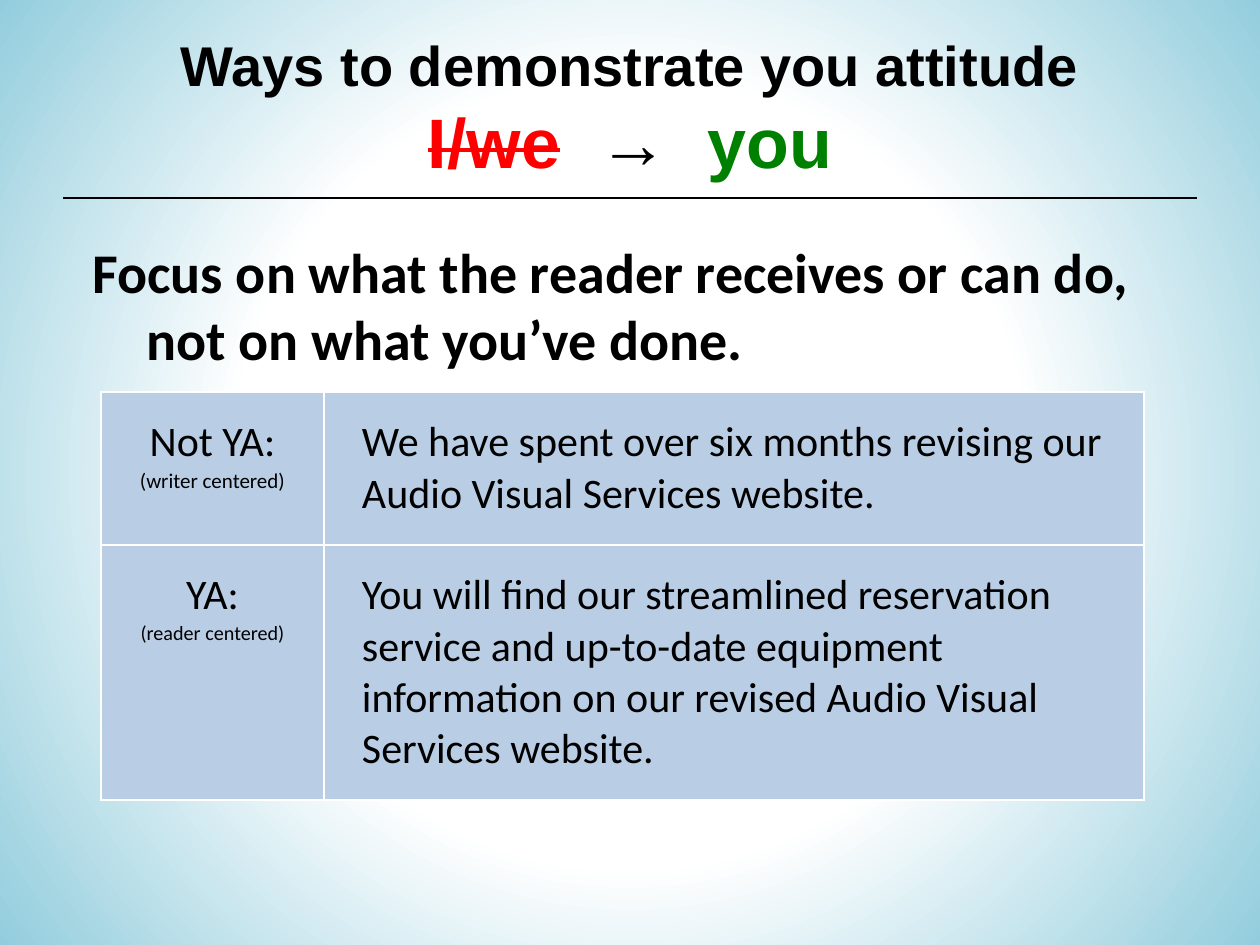
import pptx
import pptx.util
import pptx.dml.color
import pptx.enum.shapes
import pptx.enum.text
import pptx.oxml
import pptx.oxml.ns
from lxml import etree

PX_PER_INCH = 126
COLORS = {"ink": "000000", "white": "FFFFFF", "sky": "93CDDD",
          "cell": "B9CDE5", "wrong": "FF0000", "right": "008000"}
ALIGN = pptx.enum.text.PP_ALIGN
ANCHOR = pptx.enum.text.MSO_ANCHOR
qn = pptx.oxml.ns.qn


def px(count):
    return pptx.util.Emu(round(count * 914400 / PX_PER_INCH))


def rgb(name):
    return pptx.dml.color.RGBColor.from_string(COLORS[name])


def apply(target, values):
    for name, value in values.items():
        setattr(target, name, value)


class SlideBuilder:
    def __init__(self, slide):
        self.slide = slide

    def background(self, inner, outer):
        """Radial gradient that stays at the inner colour for half the radius."""
        self.slide.background.fill.solid()
        properties = self.slide.element.find(".//" + qn("p:bgPr"))
        stops = "".join(
            f'<a:gs pos="{pos}"><a:srgbClr val="{COLORS[name]}"/></a:gs>'
            for pos, name in ((50000, inner), (100000, outer)))
        gradient = pptx.oxml.parse_xml(
            f'<a:gradFill {pptx.oxml.ns.nsdecls("a")} rotWithShape="1">'
            f'<a:gsLst>{stops}</a:gsLst><a:path path="circle">'
            '<a:fillToRect l="50000" t="50000" r="50000" b="50000"/>'
            '</a:path></a:gradFill>')
        properties.replace(properties.find(qn("a:solidFill")), gradient)

    def span(self, para, text, size, font="Calibri", color="ink", bold=False, strike=False):
        span = para.add_run()
        span.text = text
        apply(span.font, {"size": pptx.util.Pt(size), "name": font, "bold": bold})
        span.font.color.rgb = rgb(color)
        if strike:
            span.font._element.set("strike", "sngStrike")

    def text_box(self, left, top, width, height, anchor):
        box = self.slide.shapes.add_textbox(px(left), px(top), px(width), px(height))
        apply(box.text_frame, {"word_wrap": True, "vertical_anchor": anchor})
        return box.text_frame.paragraphs[0]

    def title(self, first_line, spans):
        para = self.text_box(63, 9, 1134, 195, ANCHOR.MIDDLE)
        para.alignment = ALIGN.CENTER
        self.span(para, first_line, 32, "Arial", bold=True)
        para.add_line_break()
        for text, color, strike in spans:
            self.span(para, text, 40, "Arial", color, True, strike)

    def statement(self, text):
        para = self.text_box(63, 231, 1081, 150, ANCHOR.TOP)
        para.space_before = pptx.util.Pt(2)
        hanging = {"marL": px(71), "indent": px(-54)}
        for name, value in hanging.items():
            para._p.get_or_add_pPr().set(name, str(value))
        self.span(para, text, 32, bold=True)

    def rule(self, left, right, y):
        line = self.slide.shapes.add_connector(
            pptx.enum.shapes.MSO_CONNECTOR.STRAIGHT, px(left), px(y), px(right), px(y))
        line.line.color.rgb = rgb("ink")
        line.line.width = pptx.util.Pt(0.75)
        etree.SubElement(line._element.spPr, qn("a:effectLst"))

    def table(self, left, top, widths, heights, rows):
        frame = self.slide.shapes.add_table(
            len(heights), len(widths), px(left), px(top), px(sum(widths)), px(sum(heights)))
        table = frame.table
        apply(table, {"first_row": False, "horz_banding": False})
        for column, width in zip(table.columns, widths):
            column.width = px(width)
        for row, height, values in zip(table.rows, heights, rows):
            row.height = px(height)
            for cell, (alignment, lines) in zip(row.cells, values):
                self.cell(cell, alignment, lines)

    def cell(self, cell, alignment, lines):
        apply(cell, {"margin_left": px(38), "margin_right": px(38),
                     "margin_top": px(25), "margin_bottom": px(25)})
        cell.fill.solid()
        cell.fill.fore_color.rgb = rgb("cell")
        for index, side in enumerate(("lnL", "lnR", "lnT", "lnB")):
            border = pptx.oxml.parse_xml(
                f'<a:{side} {pptx.oxml.ns.nsdecls("a")} w="12700"><a:solidFill>'
                f'<a:srgbClr val="{COLORS["white"]}"/></a:solidFill></a:{side}>')
            cell._tc.get_or_add_tcPr().insert(index, border)
        for index, (text, size) in enumerate(lines):
            para = cell.text_frame.add_paragraph() if index else cell.text_frame.paragraphs[0]
            para.alignment = alignment
            self.span(para, text, size)


def main():
    deck = pptx.Presentation()
    apply(deck, {"slide_width": px(1260), "slide_height": px(945)})
    page = SlideBuilder(deck.slides.add_slide(deck.slide_layouts[6]))
    page.background("white", "sky")
    page.title("Ways to demonstrate you attitude", [
        ("I/we", "wrong", True), ("  →  ", "ink", False), ("you", "right", False)])
    page.statement("Focus on what the reader receives or can do, not on what you’ve done.")
    page.rule(63, 1197, 198)
    page.table(101, 392, [223, 820], [153, 255], [
        [(ALIGN.CENTER, [("Not YA:", 24), ("(writer centered)", 12)]),
         (ALIGN.LEFT, [("We have spent over six months revising our "
                        "Audio Visual Services website.", 24)])],
        [(ALIGN.CENTER, [("YA:", 24), ("(reader centered)", 11.5)]),
         (ALIGN.LEFT, [("You will find our streamlined reservation service and "
                        "up-to-date equipment information on our revised "
                        "Audio Visual Services website.", 24)])],
    ])
    deck.save("out.pptx")


if __name__ == "__main__":
    main()
